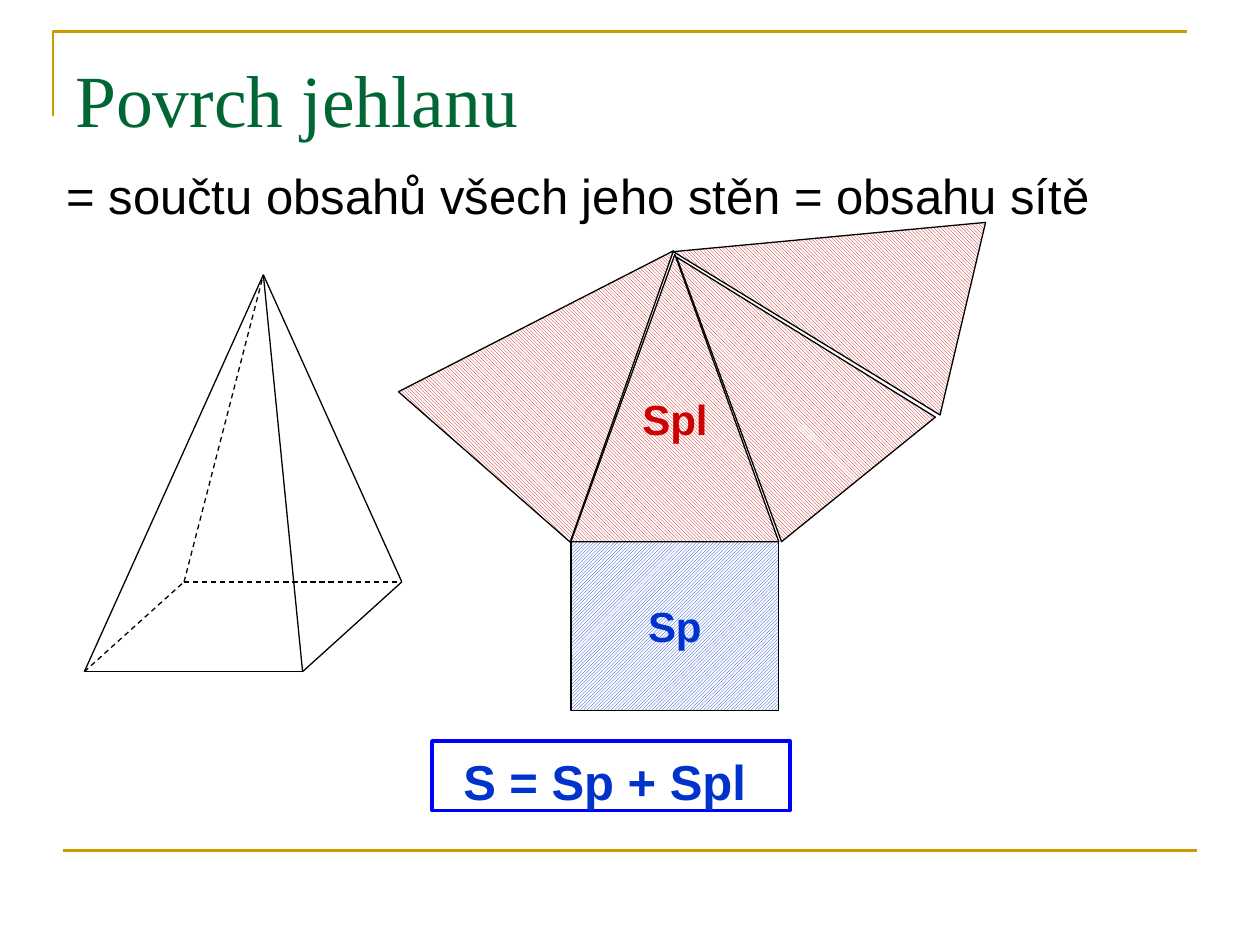
from dataclasses import dataclass
from typing import NamedTuple

from pptx import Presentation
from pptx.dml.color import RGBColor
from pptx.enum.dml import MSO_LINE, MSO_PATTERN
from pptx.enum.shapes import MSO_CONNECTOR, MSO_SHAPE
from pptx.enum.text import MSO_ANCHOR, PP_ALIGN
from pptx.oxml.ns import qn
from pptx.util import Cm, Pt
from lxml.etree import SubElement


@dataclass(frozen=True)
class Theme:
    gold: RGBColor = RGBColor(0xCC, 0x99, 0x00)
    green: RGBColor = RGBColor(0x00, 0x66, 0x33)
    black: RGBColor = RGBColor(0x00, 0x00, 0x00)
    white: RGBColor = RGBColor(0xFF, 0xFF, 0xFF)
    blue: RGBColor = RGBColor(0x00, 0x33, 0xCC)
    frame_blue: RGBColor = RGBColor(0x00, 0x00, 0xFF)
    red: RGBColor = RGBColor(0xCC, 0x00, 0x00)
    title_font: str = "Times New Roman"
    body_font: str = "Arial"
    title_size: Pt = Pt(42)
    body_size: Pt = Pt(28)
    label_size: Pt = Pt(24)
    thin: Pt = Pt(0.75)
    rule: Pt = Pt(1.5)
    frame: Pt = Pt(2.25)


THEME = Theme()


class Point(NamedTuple):
    x: float
    y: float


class Box(NamedTuple):
    left: float
    top: float
    width: float
    height: float


class Edge(NamedTuple):
    start: Point
    end: Point
    hidden: bool = False


class Face(NamedTuple):
    box: Box
    rotation: float = 0
    apex: float = 0.5


class Caption(NamedTuple):
    text: str
    box: Box
    font: dict
    margin_top: float = 0.22


LABEL_FONT = dict(name=THEME.body_font, size=THEME.label_size, bold=True)
CAPTIONS = [
    Caption("Povrch jehlanu", Box(1.27, 0.76, 22.86, 3.18),
            dict(name=THEME.title_font, size=THEME.title_size, color=THEME.green), 0.32),
    Caption("= součtu obsahů všech jeho stěn = obsahu sítě", Box(1.09, 3.12, 22.86, 1.6),
            dict(name=THEME.body_font, size=THEME.body_size, color=THEME.black)),
    Caption("S = Sp + Spl", Box(9.09, 14.94, 6.4, 1.45),
            dict(name=THEME.body_font, size=THEME.body_size, bold=True, color=THEME.blue)),
    Caption("Spl", Box(12.7, 7.72, 2.59, 1.27), dict(LABEL_FONT, color=THEME.red)),
]

FORMULA_FRAME = Box(8.71, 14.94, 7.21, 1.4)
BASE = Box(11.51, 10.92, 4.19, 3.4)
SIDE_HEIGHT = 5.79
SIDE_FACES = [
    Face(Box(9.37, 4.34, 4.6, SIDE_HEIGHT), 41.2),
    Face(Box(13.49, 4.52, 3.99, SIDE_HEIGHT), 321, 0.493),
    Face(Box(14.5, 2.74, 3.99, 5.99), 283.3, 0.493),
    Face(Box(BASE.left, BASE.top - SIDE_HEIGHT, BASE.width, SIDE_HEIGHT)),
]

APEX = Point(5.31, 5.54)
FRONT_LEFT, FRONT_RIGHT = Point(1.7, 13.54), Point(6.1, 13.54)
BACK_LEFT, BACK_RIGHT = Point(3.71, 11.73), Point(8.1, 11.73)
PYRAMID = [
    Edge(FRONT_LEFT, FRONT_RIGHT),
    Edge(FRONT_LEFT, BACK_LEFT, hidden=True),
    Edge(FRONT_RIGHT, BACK_RIGHT),
    Edge(BACK_LEFT, BACK_RIGHT, hidden=True),
    *(Edge(corner, APEX, hidden=corner == BACK_LEFT)
      for corner in (FRONT_LEFT, FRONT_RIGHT, BACK_RIGHT, BACK_LEFT)),
]
CORNER = [Point(1.07, 2.34), Point(1.07, 0.64), Point(23.93, 0.64)]
FOOTER_RULE = Edge(Point(1.27, 17.15), Point(24.13, 17.15))


def cm(values) -> list[Cm]:
    return [Cm(value) for value in values]


def style_font(font, values: dict) -> None:
    for key, value in values.items():
        if key == "color":
            font.color.rgb = value
        else:
            setattr(font, key, value)


def style_line(line, color: RGBColor, width: Pt) -> None:
    line.color.rgb = color
    line.width = width


def draw_edge(slide, edge: Edge, color: RGBColor, width: Pt) -> None:
    connector = slide.shapes.add_connector(MSO_CONNECTOR.STRAIGHT, *cm(edge.start + edge.end))
    style_line(connector.line, color, width)
    if edge.hidden:
        connector.line.dash_style = MSO_LINE.DASH
    SubElement(connector._element.spPr, qn("a:effectLst"))


def draw_corner(slide, points: list[Point]) -> None:
    first, *rest = [cm(point) for point in points]
    builder = slide.shapes.build_freeform(*first)
    builder.add_line_segments(rest, close=False)
    corner = builder.convert_to_shape()
    corner.shadow.inherit = False
    corner.fill.background()
    style_line(corner.line, THEME.gold, THEME.rule)


def draw_outline(slide, preset: MSO_SHAPE, box: Box, color: RGBColor, width: Pt):
    """Add an unfilled preset shape and return it."""
    outline = slide.shapes.add_shape(preset, *cm(box))
    outline.shadow.inherit = False
    outline.fill.background()
    style_line(outline.line, color, width)
    return outline


def hatch(shape, pattern: MSO_PATTERN, color: RGBColor) -> None:
    shape.fill.patterned()
    shape.fill.pattern = pattern
    shape.fill.fore_color.rgb = color
    shape.fill.back_color.rgb = THEME.white


def draw_face(slide, face: Face) -> None:
    triangle = draw_outline(slide, MSO_SHAPE.ISOSCELES_TRIANGLE, face.box, THEME.black, THEME.thin)
    triangle.adjustments[0] = face.apex
    triangle.rotation = face.rotation
    hatch(triangle, MSO_PATTERN.LIGHT_DOWNWARD_DIAGONAL, THEME.red)


def draw_base(slide) -> None:
    base = draw_outline(slide, MSO_SHAPE.RECTANGLE, BASE, THEME.black, THEME.thin)
    hatch(base, MSO_PATTERN.LIGHT_UPWARD_DIAGONAL, THEME.blue)
    frame = base.text_frame
    frame.word_wrap = False
    frame.vertical_anchor = MSO_ANCHOR.MIDDLE
    label = frame.paragraphs[0]
    label.alignment = PP_ALIGN.CENTER
    run = label.add_run()
    run.text = "Sp"
    style_font(run.font, dict(LABEL_FONT, color=THEME.blue))


def draw_caption(slide, caption: Caption) -> None:
    frame = slide.shapes.add_textbox(*cm(caption.box)).text_frame
    frame.word_wrap = True
    frame.margin_top = Cm(caption.margin_top)
    run = frame.paragraphs[0].add_run()
    run.text = caption.text
    style_font(run.font, caption.font)


def main() -> None:
    deck = Presentation()
    deck.slide_width, deck.slide_height = Cm(25.4), Cm(19.05)
    slide = deck.slides.add_slide(deck.slide_layouts[6])
    draw_corner(slide, CORNER)
    draw_edge(slide, FOOTER_RULE, THEME.gold, THEME.rule)
    draw_outline(slide, MSO_SHAPE.RECTANGLE, FORMULA_FRAME, THEME.frame_blue, THEME.frame)
    for edge in PYRAMID:
        draw_edge(slide, edge, THEME.black, THEME.thin)
    draw_base(slide)
    for face in SIDE_FACES:
        draw_face(slide, face)
    for caption in CAPTIONS:
        draw_caption(slide, caption)
    deck.save("out.pptx")


if __name__ == "__main__":
    main()
